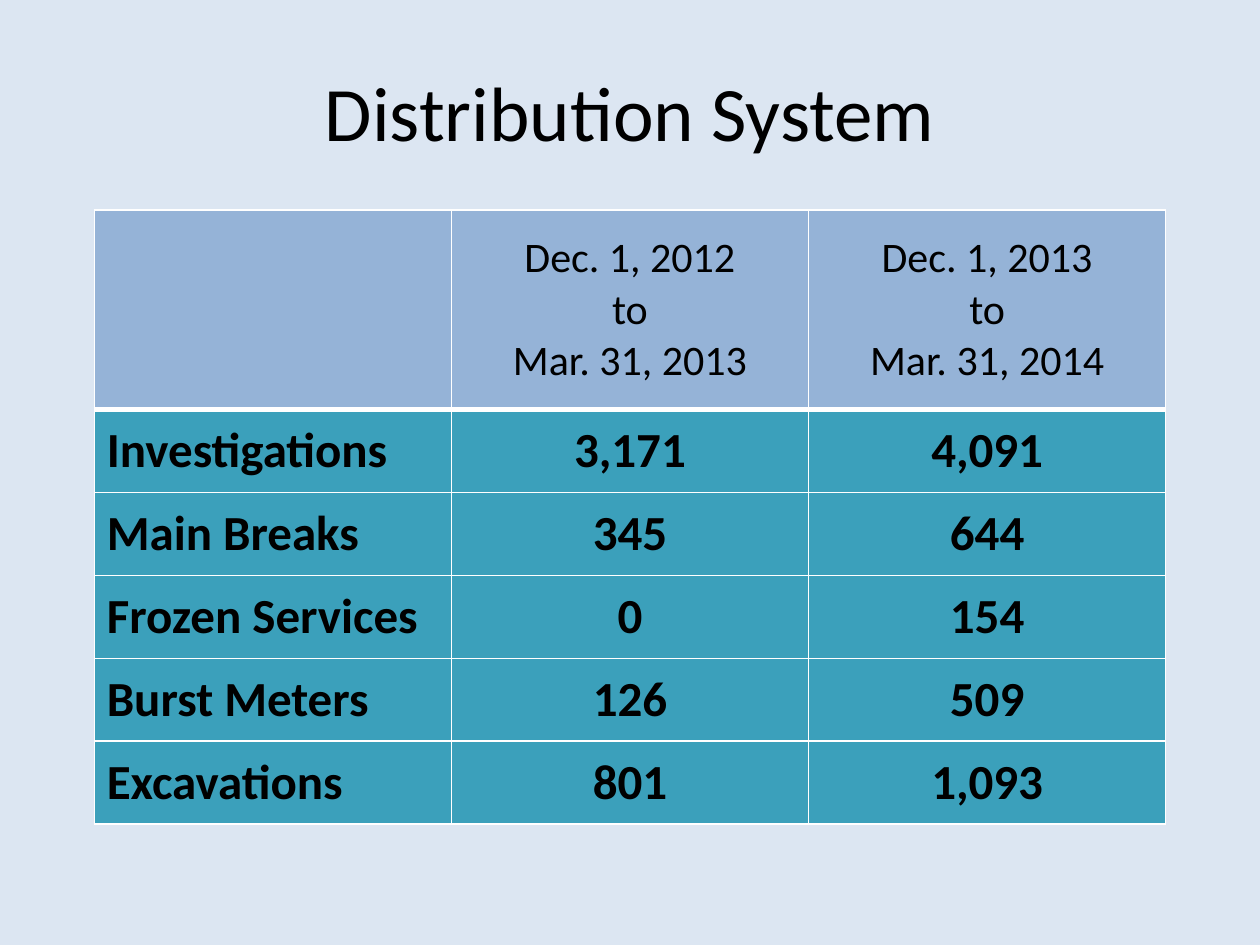
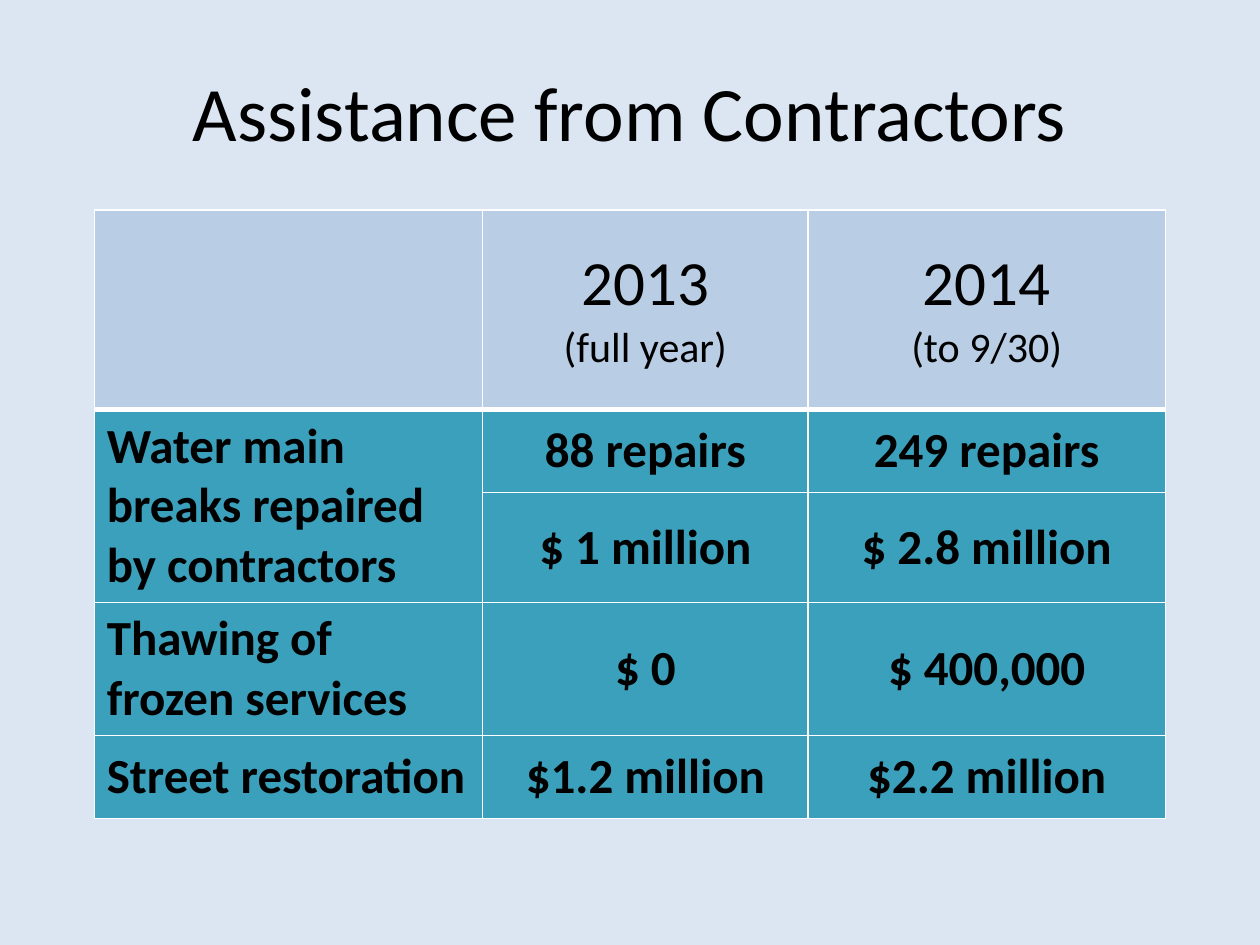
from lxml.etree import SubElement
from pptx import Presentation
from pptx.dml.color import RGBColor
from pptx.enum.text import MSO_ANCHOR, PP_ALIGN
from pptx.oxml.ns import qn
from pptx.util import Cm, Pt

PALE = RGBColor(0xDC, 0xE6, 0xF2)
BLUE = RGBColor(0x95, 0xB3, 0xD7)
LIGHT_BLUE = RGBColor(0xB9, 0xCD, 0xE5)
TEAL = RGBColor(0x3B, 0xA0, 0xBB)
WHITE = RGBColor(0xFF, 0xFF, 0xFF)
BLACK = RGBColor(0x00, 0x00, 0x00)
FONT = "Calibri"

SLIDES = [
    {
        "title": "Distribution System",
        "header_fill": BLUE,
        "header_sizes": [24, 24, 24],
        "header": ["", "Dec. 1, 2012\nto\nMar. 31, 2013", "Dec. 1, 2013\nto\nMar. 31, 2014"],
        "rows": [
            ("Investigations", "3,171", "4,091"),
            ("Main Breaks", "345", "644"),
            ("Frozen Services", "0", "154"),
            ("Burst Meters", "126", "509"),
            ("Excavations", "801", "1,093"),
        ],
        "widths": [7.2, 7.2, 7.2],
        "heights": [4.03] + [1.67] * 5,
        "merges": [],
    },
    {
        "title": "Assistance from Contractors",
        "header_fill": LIGHT_BLUE,
        "header_sizes": [36, 24],
        "header": ["", "2013\n(full year)", "2014\n(to 9/30)"],
        "rows": [
            ("Water main breaks repaired by contractors", "88 repairs", "249 repairs"),
            ("", "$ 1 million", "$ 2.8 million"),
            ("Thawing of frozen services", "$ 0", "$ 400,000"),
            ("Street restoration", "$1.2 million", "$2.2 million"),
        ],
        "widths": [7.83, 6.56, 7.2],
        "heights": [4.03, 1.67, 2.22, 2.68, 1.67],
        "merges": [((1, 0), (2, 0))],
    },
]


def write(frame, text, *, sizes, bold=False, align=PP_ALIGN.CENTER):
    for index, (line, size) in enumerate(zip(text.split("\n"), sizes)):
        para = frame.paragraphs[0] if index == 0 else frame.add_paragraph()
        para.alignment = align
        if not line:
            continue
        span = para.add_run()
        span.text = line
        span.font.name = FONT
        span.font.size = Pt(size)
        span.font.bold = bold
        span.font.color.rgb = BLACK


def add_borders(cell, bottom_width):
    properties = cell._tc.get_or_add_tcPr()
    for side, width in (("L", 1), ("R", 1), ("T", 1), ("B", bottom_width)):
        border = SubElement(properties, qn(f"a:ln{side}"), w=str(Pt(width)))
        fill = SubElement(border, qn("a:solidFill"))
        SubElement(fill, qn("a:srgbClr"), val=str(WHITE))


def add_data_table(page, content):
    rows = [content["header"], *content["rows"]]
    widths, heights = content["widths"], content["heights"]
    table = page.shapes.add_table(
        len(rows), len(widths), Cm(1.9), Cm(4.23), Cm(sum(widths)), Cm(sum(heights))
    ).table
    for column, width in zip(table.columns, widths):
        column.width = Cm(width)
    for row_index, texts in enumerate(rows):
        table.rows[row_index].height = Cm(heights[row_index])
        is_header = row_index == 0
        for column_index, text in enumerate(texts):
            cell = table.cell(row_index, column_index)
            add_borders(cell, 3 if is_header else 1)
            cell.fill.solid()
            cell.fill.fore_color.rgb = content["header_fill"] if is_header else TEAL
            cell.vertical_anchor = MSO_ANCHOR.MIDDLE
            write(
                cell.text_frame,
                text,
                sizes=content["header_sizes"] if is_header else [28],
                bold=not is_header,
                align=PP_ALIGN.CENTER if column_index else PP_ALIGN.LEFT,
            )
    for first, last in content["merges"]:
        table.cell(*first).merge(table.cell(*last))


def add_page(deck, content):
    page = deck.slides.add_slide(deck.slide_layouts[5])
    page.background.fill.solid()
    page.background.fill.fore_color.rgb = PALE
    title = page.shapes.title
    title.left, title.top, title.width, title.height = Cm(1.9), Cm(0.64), Cm(21.6), Cm(3.18)
    title.text_frame.vertical_anchor = MSO_ANCHOR.MIDDLE
    write(title.text_frame, content["title"], sizes=[44])
    add_data_table(page, content)


def main():
    """Build the two table slides and save the deck."""
    deck = Presentation()
    deck.slide_width, deck.slide_height = Cm(25.4), Cm(19.05)
    for content in SLIDES:
        add_page(deck, content)
    deck.save("out.pptx")


if __name__ == "__main__":
    main()
